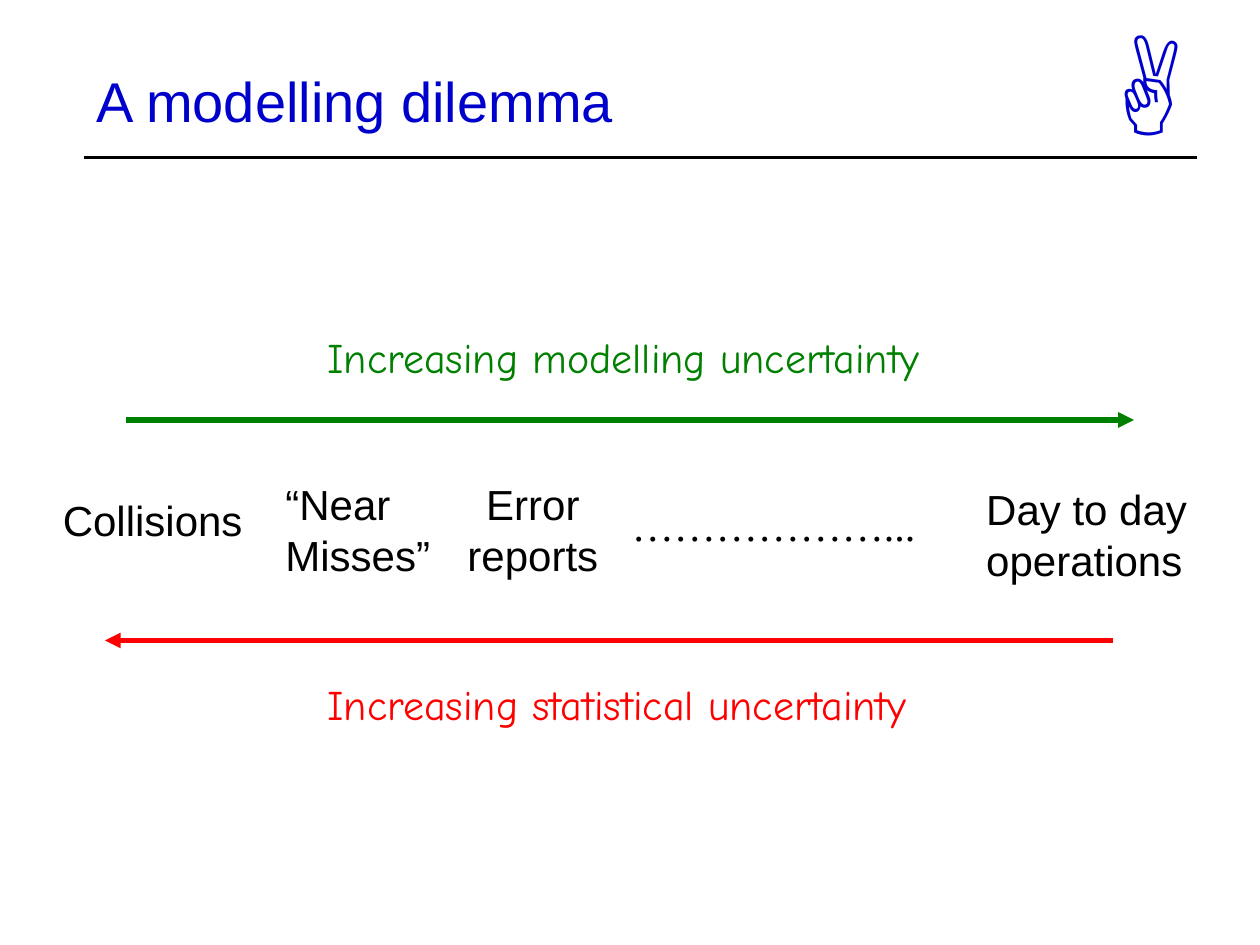
from dataclasses import dataclass

from lxml import etree
from pptx import Presentation
from pptx.dml.color import RGBColor
from pptx.enum import shapes, text
from pptx.oxml import ns
from pptx.util import Inches, Pt

WIDTH, HEIGHT = Inches(10), Inches(7.5)
COLS, ROWS = 120, 90
BLACK, BLUE, GREEN, RED = "000000", "0000CC", "008000", "FF0000"
SANS, SERIF, HAND = "Arial", "Times New Roman", "Comic Neue"


@dataclass(frozen=True)
class Label:
    lines: tuple[str, ...]
    col: float
    row: float
    cols: float
    rows: float
    font: str = SANS
    color: str = BLACK
    size: int = 24
    wrap: bool = False
    grow: bool = True
    center: bool = False
    middle: bool = False


@dataclass(frozen=True)
class Rule:
    start: float
    end: float
    row: float
    color: str
    weight: int
    arrow: str = ""


LABELS = (
    Label(("Collisions",), 4.8, 46.5, 19.6, 6),
    Label(("“Near Misses”",), 26, 45, 18.25, 10.8, wrap=True),
    Label(("Error", "reports"), 43.3, 45, 14.9, 10.8, center=True),
    Label(("………………...",), 59, 47, 29.4, 6, SERIF),
    Label(("Day to day", "operations"), 92.75, 45.5, 21.6, 10.8),
    Label(("Increasing modelling uncertainty",), 30, 31, 63.4, 6, HAND, GREEN),
    Label(("Increasing statistical uncertainty",), 30, 64, 65, 6, HAND, RED),
    Label(("A modelling dilemma",), 8, 2, 102, 15, SANS, BLUE, 32,
          wrap=True, grow=False, middle=True),
    Label(("✌",), 105, 0, 14, 15.6, SERIF, BLUE, 72, wrap=True),
)
RULES = (
    Rule(12, 108, 40, GREEN, 3, "tailEnd"),
    Rule(10, 106, 61, RED, 3, "headEnd"),
    Rule(8, 114, 15, BLACK, 2),
)


def x(cols: float) -> int:
    return round(WIDTH * cols / COLS)


def y(rows: float) -> int:
    return round(HEIGHT * rows / ROWS)


def paint(target, color: str) -> None:
    target.rgb = RGBColor.from_string(color)


def draw_label(slide, label: Label) -> None:
    sp = slide.shapes.add_textbox(x(label.col), y(label.row), x(label.cols), y(label.rows))
    tf = sp.text_frame
    tf.word_wrap = label.wrap
    if label.grow:
        tf.auto_size = text.MSO_AUTO_SIZE.SHAPE_TO_FIT_TEXT
    if label.middle:
        tf.vertical_anchor = text.MSO_ANCHOR.MIDDLE
    for i, line in enumerate(label.lines):
        p = tf.add_paragraph() if i else tf.paragraphs[0]
        p.alignment = text.PP_ALIGN.CENTER if label.center else text.PP_ALIGN.LEFT
        r = p.add_run()
        r.text = line
        r.font.name = label.font
        r.font.size = Pt(label.size)
        paint(r.font.color, label.color)


def draw_rule(slide, rule: Rule) -> None:
    sp = slide.shapes.add_connector(
        shapes.MSO_CONNECTOR.STRAIGHT,
        x(rule.start), y(rule.row), x(rule.end), y(rule.row))
    sp.line.width = Pt(rule.weight)
    sp.line.fill.solid()
    paint(sp.line.fill.fore_color, rule.color)
    sp_pr = sp._element.spPr
    if rule.arrow:
        etree.SubElement(sp_pr.find(ns.qn("a:ln")), ns.qn(f"a:{rule.arrow}"), type="triangle")
    etree.SubElement(sp_pr, ns.qn("a:effectLst"))


def main() -> None:
    prs = Presentation()
    prs.slide_width, prs.slide_height = WIDTH, HEIGHT
    slide = prs.slides.add_slide(prs.slide_layouts[6])
    for label in LABELS:
        draw_label(slide, label)
    for rule in RULES:
        draw_rule(slide, rule)
    prs.save("out.pptx")


if __name__ == "__main__":
    main()
